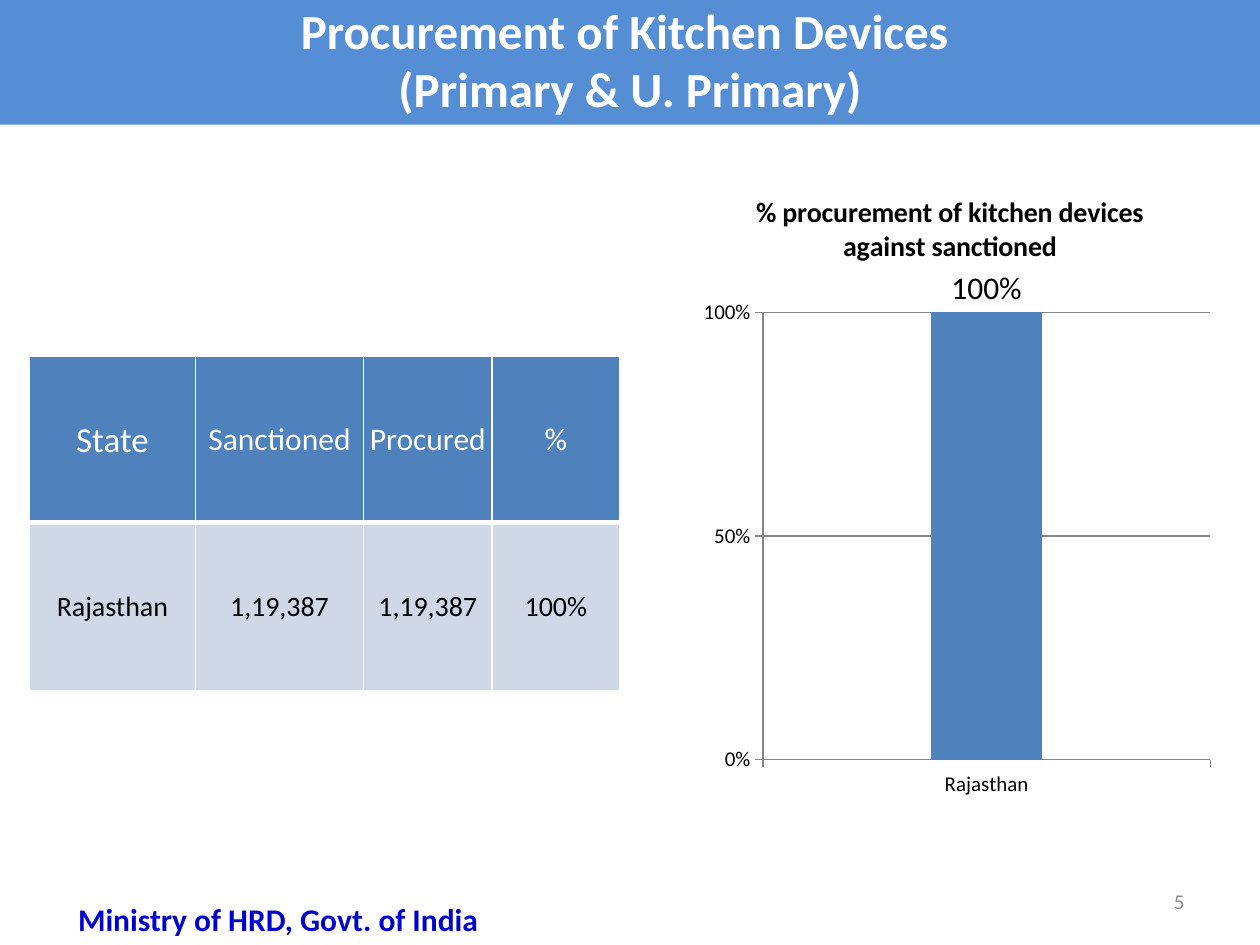
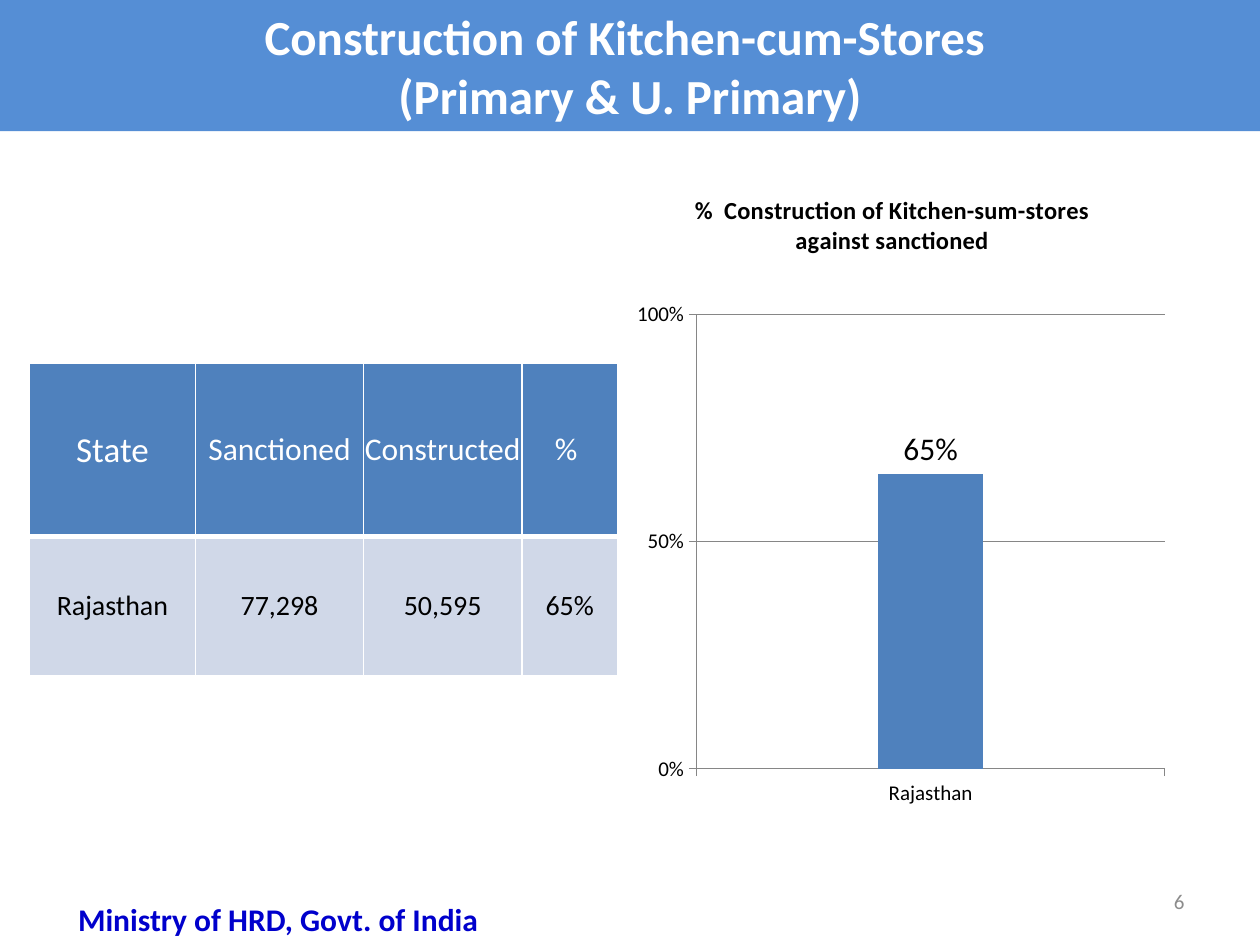
from dataclasses import dataclass

import lxml.etree
import pptx
import pptx.chart.data
import pptx.dml.color
import pptx.enum.chart
import pptx.enum.shapes
import pptx.enum.text
import pptx.oxml
import pptx.oxml.ns
import pptx.util

Pt = pptx.util.Pt
qn = pptx.oxml.ns.qn
ALIGN = pptx.enum.text.PP_ALIGN
MIDDLE = pptx.enum.text.MSO_ANCHOR.MIDDLE

FONT = "Calibri"
COLORS = {
    "band": "558ED5",
    "accent": "4F81BD",
    "row": "D0D8E8",
    "white": "FFFFFF",
    "text": "000000",
    "axis": "868686",
    "number": "8C8C8C",
    "footer": "0000CC",
}
SUBTITLE = "(Primary & U. Primary)"
FOOTER = "Ministry of HRD, Govt. of India"
PLOT_LAYOUT = {"x": 0.141, "y": 0.216, "w": 0.859, "h": 0.669}


@dataclass
class Box:
    left: float
    top: float
    width: float
    height: float

    def lengths(self) -> list:
        return [Pt(v) for v in (self.left, self.top, self.width, self.height)]


@dataclass
class TableSpec:
    box: Box
    columns: list[float]
    rows: list[float]
    texts: list[list[str]]


@dataclass
class ChartSpec:
    box: Box
    title: str
    title_size: int
    value: float
    gap: int


@dataclass
class Page:
    number: int
    title: str
    title_spacing: float
    band: Box
    table: TableSpec
    chart: ChartSpec


PAGES = [
    Page(
        5, "Procurement of Kitchen Devices ", 1.4, Box(0, -17.25, 720, 88.5),
        TableSpec(
            Box(16.75, 203.75, 337.5, 191), [95, 96, 73.5, 73], [95, 96],
            [["State", "Sanctioned", "Procured", "%"],
             ["Rajasthan", "1,19,387", "1,19,387", "100%"]],
        ),
        ChartSpec(Box(394, 96, 298, 382),
                  "% procurement of kitchen devices against sanctioned", 16, 1, 306),
    ),
    Page(
        6, "Construction of Kitchen-cum-Stores ", 1.0, Box(0, 0, 720, 75),
        TableSpec(
            Box(16.75, 207.5, 336.25, 178.5), [95, 96, 90.5, 54.75], [99, 79.5],
            [["State", "Sanctioned", "Constructed", "% "],
             ["Rajasthan", "77,298", "50,595", "65%"]],
        ),
        ChartSpec(Box(354, 96, 312, 388),
                  "%  Construction of Kitchen-sum-stores against sanctioned", 14, 0.65, 349),
    ),
]


def rgb(name: str) -> pptx.dml.color.RGBColor:
    return pptx.dml.color.RGBColor.from_string(COLORS[name])


def style_font(font, size: float, color: str, bold: bool = False) -> None:
    font.name = FONT
    font.size = Pt(size)
    font.bold = bold
    font.color.rgb = rgb(color)


def write(p, text: str, size: float, color: str, bold: bool = False, align=ALIGN.CENTER) -> None:
    p.add_run().text = text
    p.alignment = align
    style_font(p.font, size, color, bold)


def add_band(s, page: Page) -> None:
    sp = s.shapes.add_shape(pptx.enum.shapes.MSO_SHAPE.RECTANGLE, *page.band.lengths())
    sp.shadow.inherit = False
    sp.fill.solid()
    sp.fill.fore_color.rgb = rgb("band")
    sp.line.fill.background()
    tf = sp.text_frame
    tf.word_wrap = True
    tf.vertical_anchor = MIDDLE
    write(tf.paragraphs[0], page.title, 28, "white", True)
    tf.paragraphs[0].line_spacing = page.title_spacing
    write(tf.add_paragraph(), SUBTITLE, 28, "white", True)


def add_label(s, box: Box, text: str, size: float, color: str, bold: bool, align, anchor) -> None:
    tf = s.shapes.add_textbox(*box.lengths()).text_frame
    tf.word_wrap = True
    tf.vertical_anchor = anchor
    write(tf.paragraphs[0], text, size, color, bold, align)


def set_borders(cell, widths: dict[str, float]) -> None:
    tc_pr = cell._tc.get_or_add_tcPr()
    for i, (side, width) in enumerate(widths.items()):
        ln = pptx.oxml.parse_xml(
            f'<a:{side} xmlns:a="http://schemas.openxmlformats.org/drawingml/2006/main" '
            f'w="{Pt(width)}"><a:solidFill><a:srgbClr val="{COLORS["white"]}"/>'
            f'</a:solidFill></a:{side}>'
        )
        tc_pr.insert(i, ln)


def add_table(s, spec: TableSpec) -> None:
    table = s.shapes.add_table(len(spec.rows), len(spec.columns), *spec.box.lengths()).table
    for column, width in zip(table.columns, spec.columns):
        column.width = Pt(width)
    for i, (height, texts) in enumerate(zip(spec.rows, spec.texts)):
        table.rows[i].height = Pt(height)
        header = i == 0
        for j, text in enumerate(texts):
            cell = table.cell(i, j)
            cell.margin_left = cell.margin_right = cell.margin_top = Pt(0.5)
            cell.margin_bottom = Pt(0)
            cell.vertical_anchor = MIDDLE
            cell.fill.solid()
            cell.fill.fore_color.rgb = rgb("accent" if header else "row")
            size = (20 if j == 0 else 18) if header else 16
            write(cell.text_frame.paragraphs[0], text, size, "white" if header else "text")
            set_borders(cell, {"lnL": 1, "lnR": 1, "lnT": 1 if header else 3,
                               "lnB": 3 if header else 1})


def set_plot_layout(chart) -> None:
    area = chart._chartSpace.find(".//" + qn("c:plotArea"))
    for old in area.findall(qn("c:layout")):
        area.remove(old)
    layout = lxml.etree.Element(qn("c:layout"))
    manual = lxml.etree.SubElement(layout, qn("c:manualLayout"))
    settings = {"layoutTarget": "inner", "xMode": "edge", "yMode": "edge", **PLOT_LAYOUT}
    for tag, value in settings.items():
        lxml.etree.SubElement(manual, qn(f"c:{tag}")).set("val", str(value))
    area.insert(0, layout)


def add_chart(s, spec: ChartSpec) -> None:
    data = pptx.chart.data.CategoryChartData()
    data.categories = ["Rajasthan"]
    data.add_series("Series 1", [spec.value])
    chart = s.shapes.add_chart(
        pptx.enum.chart.XL_CHART_TYPE.COLUMN_CLUSTERED, *spec.box.lengths(), data
    ).chart
    style_font(chart.font, 18, "text")
    chart.has_legend = False
    chart.has_title = True
    write(chart.chart_title.text_frame.paragraphs[0], spec.title, spec.title_size, "text", True)
    chart.chart_title.include_in_layout = False

    plot = chart.plots[0]
    plot.gap_width = spec.gap
    plot.vary_by_categories = False
    fill = plot.series[0].format.fill
    fill.solid()
    fill.fore_color.rgb = rgb("accent")
    plot.has_data_labels = True
    labels = plot.data_labels
    labels.show_value = True
    labels.number_format = "0%"
    labels.number_format_is_linked = False
    labels.position = pptx.enum.chart.XL_LABEL_POSITION.OUTSIDE_END
    style_font(labels.font, 18, "text")

    axis = chart.value_axis
    axis.minimum_scale, axis.maximum_scale, axis.major_unit = 0, 1, 0.5
    axis.tick_labels.number_format = "0%"
    axis.tick_labels.number_format_is_linked = False
    axis.has_major_gridlines = True
    for ax in (axis, chart.category_axis):
        ax.major_tick_mark = pptx.enum.chart.XL_TICK_MARK.OUTSIDE
        style_font(ax.tick_labels.font, 12, "text")
    for part in (axis, chart.category_axis, axis.major_gridlines):
        part.format.line.color.rgb = rgb("axis")
        part.format.line.width = Pt(0.75)
    set_plot_layout(chart)


def main() -> None:
    prs = pptx.Presentation()
    prs.slide_width, prs.slide_height = Pt(720), Pt(540)
    for page in PAGES:
        s = prs.slides.add_slide(prs.slide_layouts[6])
        add_band(s, page)
        add_table(s, page.table)
        add_chart(s, page.chart)
        add_label(s, Box(516, 500.5, 168, 28.75), str(page.number), 12, "number", False,
                  ALIGN.RIGHT, MIDDLE)
        add_label(s, Box(18, 511, 282, 29), FOOTER, 18, "footer", True,
                  ALIGN.CENTER, pptx.enum.text.MSO_ANCHOR.TOP)
    prs.save("out.pptx")


if __name__ == "__main__":
    main()
